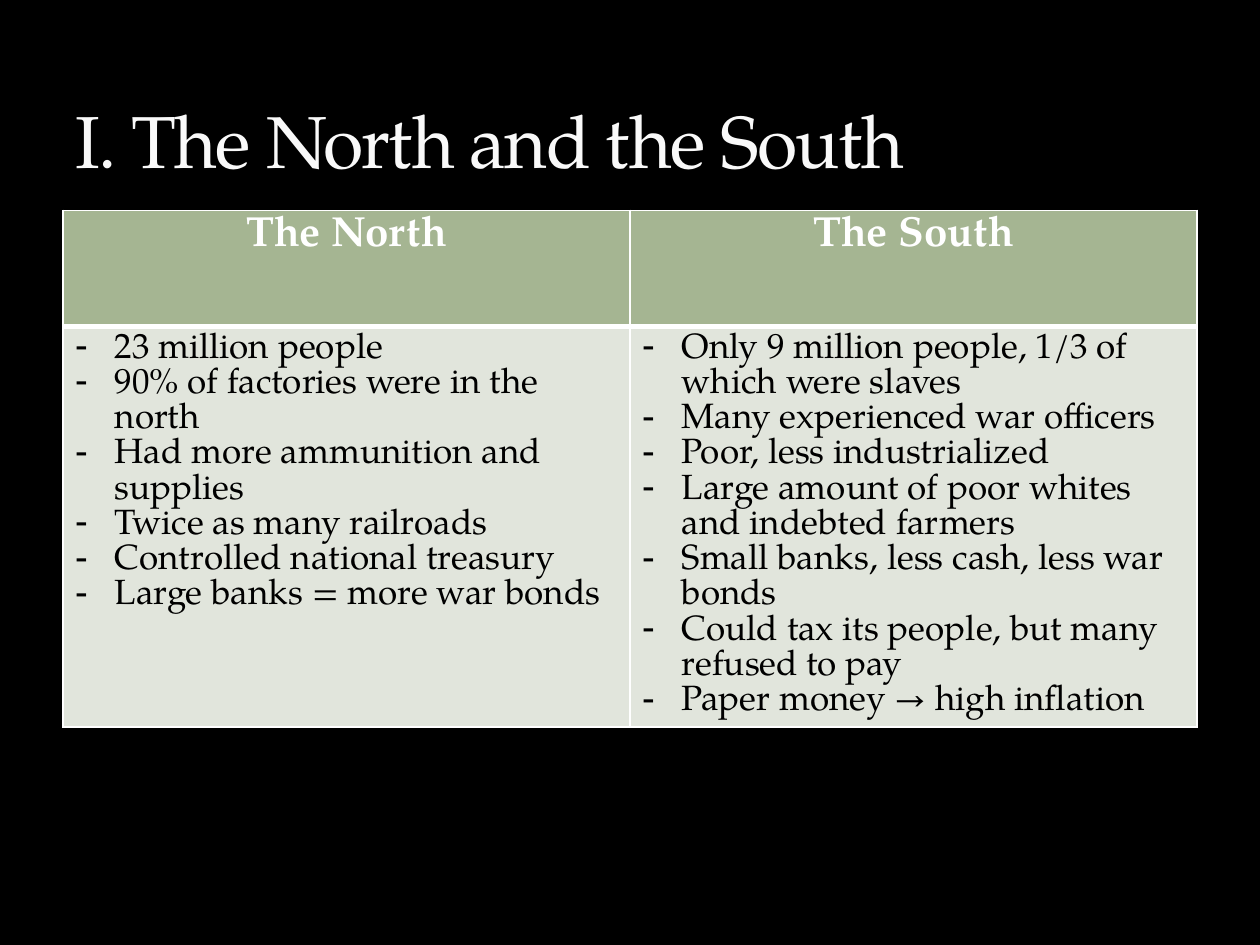
from dataclasses import dataclass

from lxml import etree
from pptx import Presentation
from pptx import util as u
from pptx.dml.color import RGBColor
from pptx.enum import text
from pptx.oxml.ns import qn

FONT = "TeX Gyre Pagella"
WHITE = "FFFFFF"
INDENT = u.Inches(0.31)


@dataclass
class Side:
    name: str
    facts: list[str]


SIDES = [
    Side("The North", [
        "23 million people",
        "90% of factories were in the north",
        "Had more ammunition and supplies",
        "Twice as many railroads",
        "Controlled national treasury",
        "Large banks = more war bonds",
    ]),
    Side("The South", [
        "Only 9 million people, 1/3 of which were slaves",
        "Many experienced war officers",
        "Poor, less industrialized",
        "Large amount of poor whites and indebted farmers",
        "Small banks, less cash, less war bonds",
        "Could tax its people, but many refused to pay",
        "Paper money → high inflation",
    ]),
]


def set_color(fill, color: str) -> None:
    fill.solid()
    fill.fore_color.rgb = RGBColor.from_string(color)


def style_text(tf, size: float, color: str, bold: bool = False) -> None:
    for p in tf.paragraphs:
        for r in p.runs:
            r.font.name = FONT
            r.font.size = u.Pt(size)
            r.font.bold = bold
            set_color(r.font.fill, color)


def add_bullet(p) -> None:
    pPr = p._p.get_or_add_pPr()
    pPr.set("marL", str(INDENT))
    pPr.set("indent", str(-INDENT))
    etree.SubElement(pPr, qn("a:buChar"), char="-")


def set_borders(cell, top: float, bottom: float) -> None:
    tcPr = cell._tc.get_or_add_tcPr()
    widths = {"lnL": 1, "lnR": 1, "lnT": top, "lnB": bottom}
    for i, (tag, width) in enumerate(widths.items()):
        ln = etree.Element(qn(f"a:{tag}"), w=str(u.Pt(width)))
        fill = etree.SubElement(ln, qn("a:solidFill"))
        etree.SubElement(fill, qn("a:srgbClr"), val=WHITE)
        tcPr.insert(i, ln)


def add_title(s, title: str) -> None:
    sp = s.shapes.add_textbox(u.Inches(0.5), u.Inches(0.17), u.Inches(9), u.Inches(1.33))
    tf = sp.text_frame
    tf.word_wrap = True
    tf.vertical_anchor = text.MSO_ANCHOR.BOTTOM
    tf.text = title
    style_text(tf, 42, "F9F9F9")
    tf.paragraphs[0].runs[0].font._element.set("spc", "-100")


def add_side(header, body, side: Side) -> None:
    header.text_frame.text = side.name
    header.text_frame.paragraphs[0].alignment = text.PP_ALIGN.CENTER
    style_text(header.text_frame, 24, WHITE, bold=True)
    set_color(header.fill, "A5B592")
    set_borders(header, top=1, bottom=3)

    body.text_frame.text = "\n".join(side.facts)
    for p in body.text_frame.paragraphs:
        add_bullet(p)
    style_text(body.text_frame, 20, "000000")
    set_color(body.fill, "E1E5DC")
    set_borders(body, top=3, bottom=1)


def add_comparison(s, sides: list[Side]) -> None:
    frame = s.shapes.add_table(
        2, len(sides), u.Inches(0.5), u.Inches(1.67), u.Inches(9), u.Inches(4.09)
    )
    table = frame.table
    table.rows[0].height = u.Inches(0.92)
    table.rows[1].height = u.Inches(3.17)
    for col, side in enumerate(sides):
        add_side(table.cell(0, col), table.cell(1, col), side)


def main() -> None:
    prs = Presentation()
    prs.slide_width, prs.slide_height = u.Inches(10), u.Inches(7.5)
    s = prs.slides.add_slide(prs.slide_layouts[6])
    set_color(s.background.fill, "000000")
    add_comparison(s, SIDES)
    add_title(s, "I. The North and the South")
    prs.save("out.pptx")


if __name__ == "__main__":
    main()
